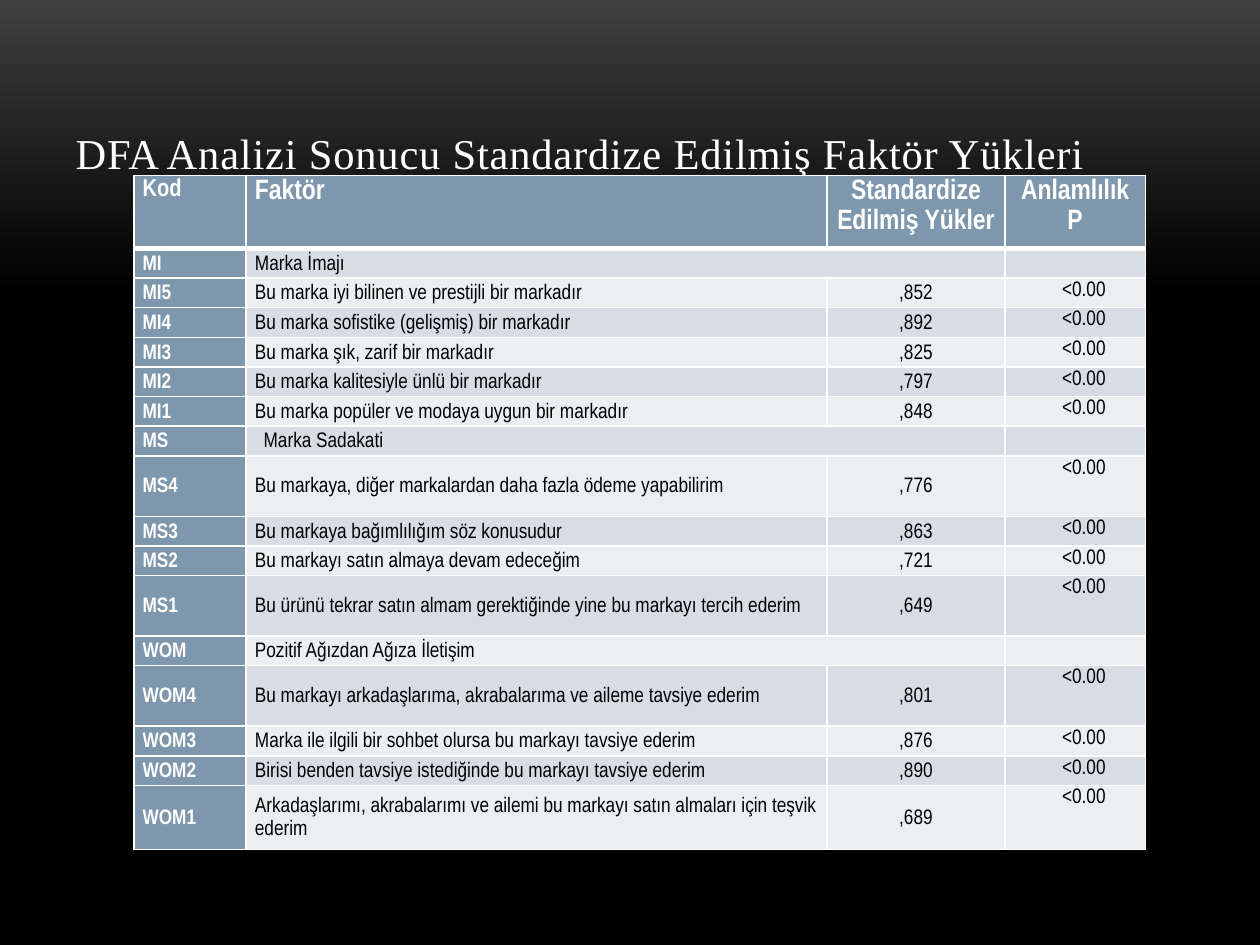
"""Build a slide with a table of standardized factor loadings."""
from lxml import etree
from pptx import Presentation
from pptx.dml.color import RGBColor
from pptx.enum import text as t
from pptx.oxml import ns
from pptx.util import Pt

WHITE = RGBColor(0xFF, 0xFF, 0xFF)
BLACK = RGBColor(0, 0, 0)
CHARCOAL = RGBColor(0x3F, 0x3F, 0x3F)
BLUE = RGBColor(0x7E, 0x97, 0xAD)
BANDS = [RGBColor(0xEC, 0xEF, 0xF1), RGBColor(0xD8, 0xDD, 0xE3)]
CENTER = t.PP_ALIGN.CENTER
LEFT = t.PP_ALIGN.LEFT

HEADERS = ["Kod", "Faktör", "Standardize Edilmiş Yükler", "Anlamlılık\nP"]
ROWS = [
    ("MI", "Marka İmajı", ""),
    ("MI5", "Bu marka iyi bilinen ve prestijli bir markadır", ",852"),
    ("MI4", "Bu marka sofistike (gelişmiş) bir markadır", ",892"),
    ("MI3", "Bu marka şık, zarif bir markadır", ",825"),
    ("MI2", "Bu marka kalitesiyle ünlü bir markadır", ",797"),
    ("MI1", "Bu marka popüler ve modaya uygun bir markadır", ",848"),
    ("MS", "Marka Sadakati", ""),
    ("MS4", "Bu markaya, diğer markalardan daha fazla ödeme yapabilirim", ",776"),
    ("MS3", "Bu markaya bağımlılığım söz konusudur", ",863"),
    ("MS2", "Bu markayı satın almaya devam edeceğim", ",721"),
    ("MS1", "Bu ürünü tekrar satın almam gerektiğinde yine bu markayı tercih ederim", ",649"),
    ("WOM", "Pozitif Ağızdan Ağıza İletişim", ""),
    ("WOM4", "Bu markayı arkadaşlarıma, akrabalarıma ve aileme tavsiye ederim", ",801"),
    ("WOM3", "Marka ile ilgili bir sohbet olursa bu markayı tavsiye ederim", ",876"),
    ("WOM2", "Birisi benden tavsiye istediğinde bu markayı tavsiye ederim", ",890"),
    ("WOM1", "Arkadaşlarımı, akrabalarımı ve ailemi bu markayı satın almaları için teşvik ederim", ",689"),
]
COLUMN_WIDTHS = [64.2, 332, 101.5, 80.4]
HEADER_HEIGHT, ROW_HEIGHT = 41.8, 16.95
TALL_ROWS = {"MS4": 34.6, "MS1": 34.6, "WOM4": 34.6, "WOM1": 36.5}


def write(frame, content, size=12, color=BLACK, bold=False, align=LEFT,
          font="Arial Narrow", spacing=1.15, indent=0):
    frame.text = content
    for para in frame.paragraphs:
        para.alignment = align
        para.line_spacing = spacing
        if indent:
            para._p.get_or_add_pPr().set("indent", str(Pt(indent)))
        for span in para.runs:
            span.font.name = font
            span.font.size = Pt(size)
            span.font.bold = bold
            span.font.color.rgb = color
        if not para.runs:
            etree.SubElement(para._p, ns.qn("a:endParaRPr"), sz=str(size * 100))


def style_cell(cell, fill, anchor, top=1, bottom=1):
    cell.margin_left = cell.margin_right = Pt(5)
    cell.margin_top = cell.margin_bottom = 0
    cell.vertical_anchor = anchor
    properties = cell._tc.get_or_add_tcPr()
    for side, width in (("L", 1), ("R", 1), ("T", top), ("B", bottom)):
        line = etree.SubElement(properties, ns.qn(f"a:ln{side}"), w=str(Pt(width)))
        solid = etree.SubElement(line, ns.qn("a:solidFill"))
        etree.SubElement(solid, ns.qn("a:srgbClr"), val=str(WHITE))
    cell.fill.solid()
    cell.fill.fore_color.rgb = fill


deck = Presentation()
deck.slide_width, deck.slide_height = Pt(720), Pt(540)
page = deck.slides.add_slide(deck.slide_layouts[5])

backdrop = page.background.fill
backdrop.gradient()
backdrop.gradient_angle = 270
for stop, position, color in zip(backdrop.gradient_stops, (0, 0.31), (CHARCOAL, BLACK)):
    stop.position = position
    stop.color.rgb = color

title = page.shapes.title
title.left, title.top, title.width, title.height = Pt(36), Pt(88.5), Pt(648), Pt(45.5)
title.text_frame.vertical_anchor = t.MSO_ANCHOR.BOTTOM
title.text_frame.auto_size = t.MSO_AUTO_SIZE.NONE
title.text_frame.margin_top = 0
title.text_frame.margin_bottom = Pt(32)
write(title.text_frame, "DFA Analizi Sonucu Standardize Edilmiş Faktör Yükleri",
      size=24.3, color=WHITE, font="Times New Roman", spacing=1.0)
for span in title.text_frame.paragraphs[0].runs:
    span._r.get_or_add_rPr().set("spc", "50")

heights = [HEADER_HEIGHT] + [TALL_ROWS.get(code, ROW_HEIGHT) for code, _, _ in ROWS]
table = page.shapes.add_table(len(heights), len(COLUMN_WIDTHS), Pt(76.5), Pt(100.2),
                              Pt(sum(COLUMN_WIDTHS)), Pt(sum(heights))).table
table.horz_banding = False
for column, width in zip(table.columns, COLUMN_WIDTHS):
    column.width = Pt(width)
for row, height in zip(table.rows, heights):
    row.height = Pt(height)

for index, header in enumerate(HEADERS):
    cell = table.cell(0, index)
    style_cell(cell, BLUE, t.MSO_ANCHOR.TOP, bottom=3)
    write(cell.text_frame, header, size=16 if index else 14, color=WHITE, bold=True,
          align=CENTER if index > 1 else LEFT)

for number, (code, factor, loading) in enumerate(ROWS, start=1):
    significance = "<0.00" if loading else ""
    for index, content in enumerate((code, factor, loading, significance)):
        cell = table.cell(number, index)
        style_cell(cell, BANDS[number % 2] if index else BLUE,
                   t.MSO_ANCHOR.TOP if index == 3 else t.MSO_ANCHOR.MIDDLE,
                   top=3 if number == 1 else 1)
        write(cell.text_frame, content, color=BLACK if index else WHITE, bold=index == 0,
              align=CENTER if index > 1 else LEFT,
              indent=10 if index == 3 else 5 if content == "Marka Sadakati" else 0)
    if not loading:
        table.cell(number, 1).merge(table.cell(number, 2))

deck.save("out.pptx")
